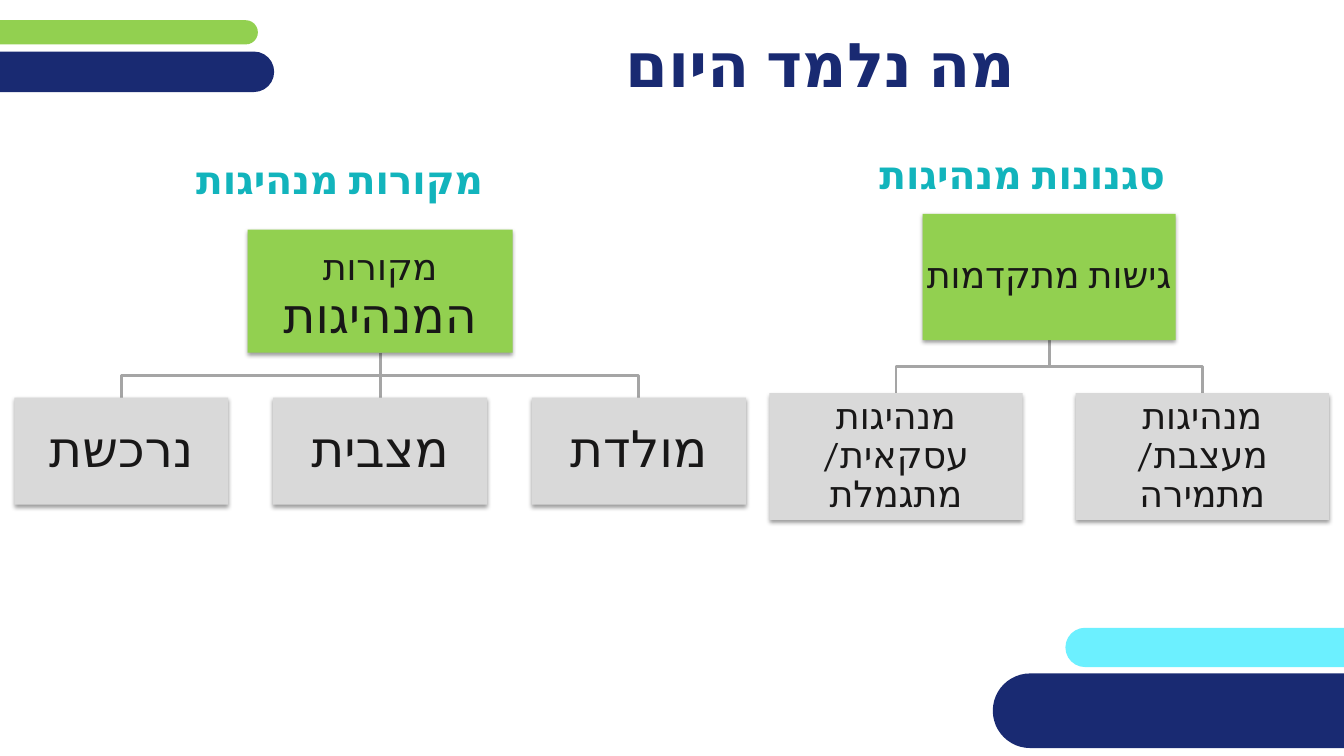
"""Build a slide with two leadership trees under a title."""
import pptx
import pptx.util
import pptx.dml.color
import pptx.enum.shapes
import pptx.enum.text
import pptx.oxml
import pptx.oxml.ns

Cm, Pt = pptx.util.Cm, pptx.util.Pt
SHAPE = pptx.enum.shapes.MSO_SHAPE
ALIGN = pptx.enum.text.PP_ALIGN

FONT = "League Spartan"
NAVY, TEAL, GREEN, CYAN = "192A72", "12B4BC", "92D050", "6CF0FF"
GREY, LINE, INK = "D9D9D9", "A5A5A5", "181717"
GAP = 0.21

TITLE = ("מה נלמד היום ", (7.09, 0.58, 26.77, 2.01))
STYLES_HEADING = ("סגנונות מנהיגות", (6.4, 3.63, 23.72, 1.5))
SOURCES_HEADING = ("מקורות מנהיגות", (1.2, 3.76, 11.73, 1.5))

BARS = [
    (CYAN, (26.85, 15.82, 13.23, 0.99)),
    (GREEN, (-0.71, 0.51, 7.21, 0.61)),
    (NAVY, (-1.35, 1.3, 8.26, 1.02)),
    (NAVY, (25.02, 16.97, 10.44, 1.88)),
]

TREES = [
    {"center": 26.44, "top": 5.39, "root_size": (6.38, 3.18), "child_width": 6.38,
     "root": [("גישות מתקדמות", 26)], "child_pt": 26,
     "children": ["מנהיגות עסקאית/\nמתגמלת", "מנהיגות מעצבת/ מתמירה"]},
    {"center": 9.58, "top": 5.79, "root_size": (6.68, 3.1), "child_width": 5.39,
     "root": [("מקורות", 26), (" המנהיגות", 35)], "child_pt": 36,
     "children": ["נרכשת", "מצבית", "מולדת"]},
]

SHADOW = (
    '<a:effectLst %s><a:outerShdw blurRad="%d" dist="%d" dir="5400000" algn="ctr" rotWithShape="0">'
    '<a:srgbClr val="000000"><a:alpha val="38000"/></a:srgbClr></a:outerShdw></a:effectLst>'
)


def rgb(color):
    return pptx.dml.color.RGBColor.from_string(color)


def place(sp, box):
    sp.left, sp.top, sp.width, sp.height = map(Cm, box)


def write(sp, runs, color=INK, bold=False, align=ALIGN.CENTER, inset=None, indent=None, spacing=None):
    tf = sp.text_frame
    tf.word_wrap = True
    tf.auto_size = pptx.enum.text.MSO_AUTO_SIZE.NONE
    tf.vertical_anchor = pptx.enum.text.MSO_ANCHOR.MIDDLE
    if inset is not None:
        tf.margin_left = tf.margin_right = tf.margin_top = tf.margin_bottom = Cm(inset)
    p = tf.paragraphs[0]
    p.alignment = align
    p.space_before = Pt(0)
    p.line_spacing = spacing
    pPr = p._p.get_or_add_pPr()
    pPr.set("rtl", "1")
    if indent is not None:
        pPr.set("marL", str(Cm(indent)))
        pPr.set("indent", "0")
        pPr.append(pptx.oxml.parse_xml("<a:buNone %s/>" % pptx.oxml.ns.nsdecls("a")))
    for text, size in runs:
        for i, part in enumerate(text.split("\n")):
            if i:
                p.add_line_break()
            r = p.add_run()
            r.text = part
            r.font.name, r.font.size, r.font.bold = FONT, Pt(size), bold
            r.font.color.rgb = rgb(color)
            rPr = r._r.get_or_add_rPr()
            rPr.set("lang", "he-IL")
            rPr.append(pptx.oxml.parse_xml(
                '<a:cs %s typeface="%s"/>' % (pptx.oxml.ns.nsdecls("a"), FONT)))


def add_block(s, kind, box, fill):
    sp = s.shapes.add_shape(kind, *map(Cm, box))
    sp.shadow.inherit = False
    sp.fill.solid()
    sp.fill.fore_color.rgb = rgb(fill)
    sp.line.fill.background()
    return sp


def add_card(s, box, fill, runs):
    sp = add_block(s, SHAPE.RECTANGLE, box, fill)
    spPr = sp._element.spPr
    spPr.remove(spPr.find(pptx.oxml.ns.qn("a:effectLst")))
    spPr.append(pptx.oxml.parse_xml(
        SHADOW % (pptx.oxml.ns.nsdecls("a"), Pt(3.1), Pt(1.6))))
    write(sp, runs, inset=0.05, spacing=0.9)


def add_branch(s, x1, y1, x2, y2):
    if abs(x1 - x2) < 0.01:
        sp = s.shapes.add_connector(
            pptx.enum.shapes.MSO_CONNECTOR.STRAIGHT, Cm(x1), Cm(y1), Cm(x1), Cm(y2))
        sp._element.spPr.append(
            pptx.oxml.parse_xml("<a:effectLst %s/>" % pptx.oxml.ns.nsdecls("a")))
    else:
        mid = (y1 + y2) / 2
        fb = s.shapes.build_freeform(Cm(x1), Cm(y1))
        fb.add_line_segments(
            [(Cm(x), Cm(y)) for x, y in ((x1, mid), (x2, mid), (x2, y2))], close=False)
        sp = fb.convert_to_shape()
        sp.shadow.inherit = False
        sp.fill.background()
    sp.line.color.rgb = rgb(LINE)
    sp.line.width = Pt(2)


def add_tree(s, tree):
    center, top, width = tree["center"], tree["top"], tree["child_width"]
    root_w, root_h = tree["root_size"]
    pitch = width * (1 + GAP)
    bottom = top + root_h
    child_top = bottom + width * GAP
    middle = (len(tree["children"]) - 1) / 2
    xs = [center + (i - middle) * pitch for i in range(len(tree["children"]))]
    for x in xs:
        add_branch(s, center, bottom, x, child_top)
    add_card(s, (center - root_w / 2, top, root_w, root_h), GREEN, tree["root"])
    for x, text in zip(xs, tree["children"]):
        add_card(s, (x - width / 2, child_top, width, width / 2), GREY, [(text, tree["child_pt"])])


def main():
    prs = pptx.Presentation()
    prs.slide_width, prs.slide_height = Cm(33.87), Cm(19.05)
    s = prs.slides.add_slide(prs.slide_layouts[1])
    for fill, box in BARS:
        add_block(s, SHAPE.ROUNDED_RECTANGLE, box, fill).adjustments[0] = 0.5

    text, box = TITLE
    place(s.shapes.title, box)
    write(s.shapes.title, [(text, 44)], color=NAVY, bold=True)

    sources = s.shapes.add_textbox(0, 0, 0, 0)
    for sp, (text, box) in ((s.placeholders[1], STYLES_HEADING), (sources, SOURCES_HEADING)):
        place(sp, box)
        write(sp, [(text, 28)], color=TEAL, bold=True, align=ALIGN.RIGHT, indent=0.5)

    for tree in TREES:
        add_tree(s, tree)
    prs.save("out.pptx")


if __name__ == "__main__":
    main()
